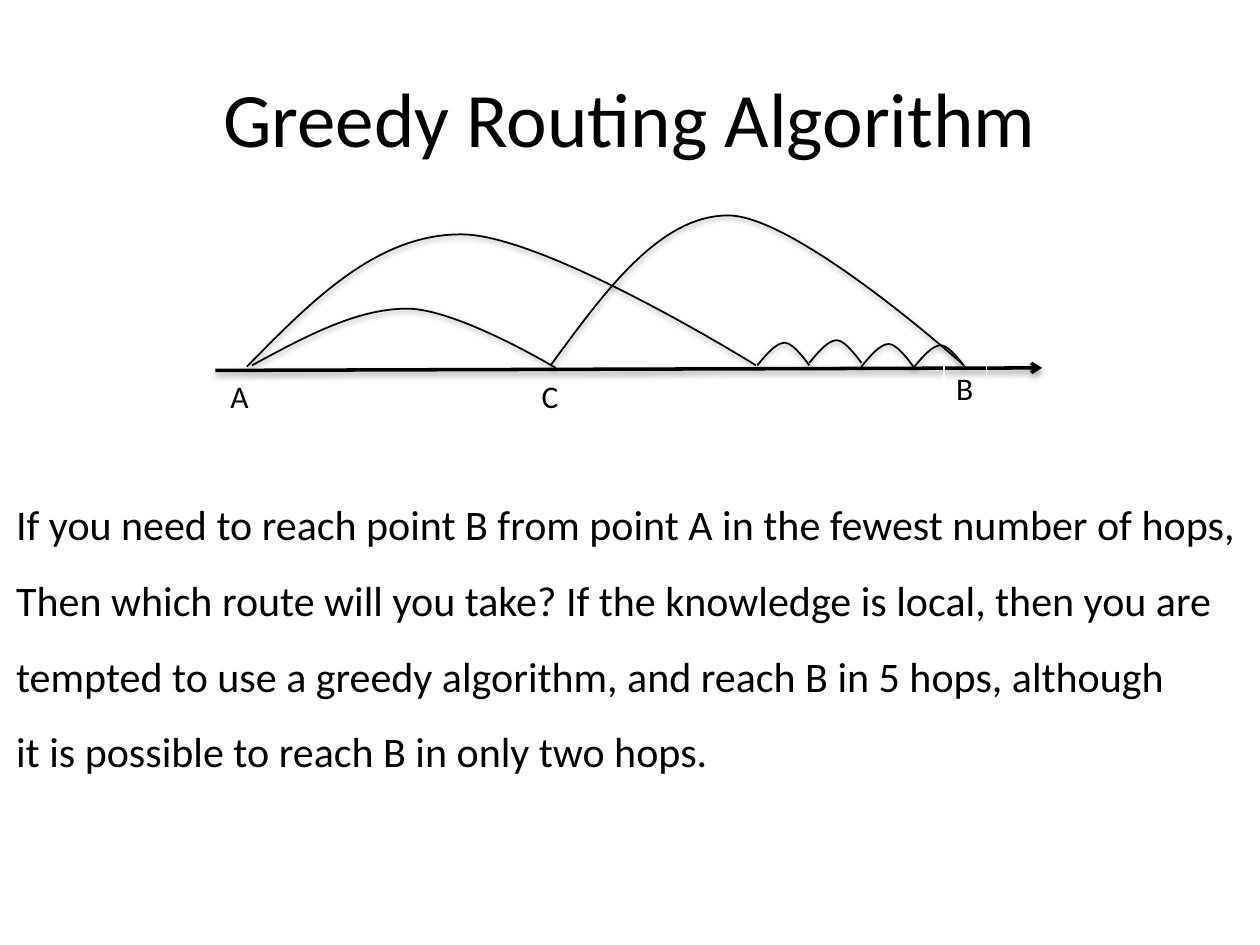
from collections import namedtuple
from lxml.etree import SubElement
from pptx import Presentation
from pptx.dml.color import RGBColor
from pptx.enum.shapes import MSO_CONNECTOR
from pptx.enum.text import MSO_ANCHOR, MSO_AUTO_SIZE, PP_ALIGN
from pptx.oxml.ns import qn
from pptx.util import Inches, Pt

BLACK = RGBColor(0x00, 0x00, 0x00)
WHITE = RGBColor(0xFF, 0xFF, 0xFF)
FONT = "Calibri"
SLIDE_W, SLIDE_H = Inches(10), Inches(7.5)
COLUMNS, ROWS = 100, 75

Box = namedtuple("Box", "left top width height")

TITLE_BOX = Box(5, 3, 90, 12.5)
ROUTES_BOX = Box(17, 17, 66, 16.4)
BODY_BOX = Box(0.3, 37.1, 99.7, 25.3)

BODY_LINES = [
    "If you need to reach point B from point A in the fewest number of hops,",
    "Then which route will you take? If the knowledge is local, then you are",
    "tempted to use a greedy algorithm, and reach B in 5 hops, although",
    "it is possible to reach B in only two hops.",
]
LONG_HOPS = [
    ((2.6, 12.1), (19.6, 1.6), (43, 12), 6.7),
    ((3, 12), (15.3, 7.5), (27.1, 12.2), 4),
    ((26.7, 12), (40.8, 0.1), (59.4, 11.9), 5.4),
]
SHORT_HOP_BASES = [12, 11.8, 12.1, 12.2]
SHORT_HOP_START, SHORT_HOP_STEP = 43.1, 4.13
LABELS = [
    ("A", Box(0.3, 12.4, 3.5, 4)),
    ("B", Box(57.9, 11.8, 3.4, 4)),
    ("C", Box(25, 12.4, 3.4, 4)),
]


def x_at(columns):
    return round(SLIDE_W * columns / COLUMNS)


def y_at(rows):
    return round(SLIDE_H * rows / ROWS)


def apply_format(target, values):
    for name, value in values.items():
        setattr(target, name, value)


def add_text(page, box, lines, size, frame_format, para_format):
    text_box = page.shapes.add_textbox(
        x_at(box.left), y_at(box.top), x_at(box.width), y_at(box.height))
    frame = text_box.text_frame
    apply_format(frame, frame_format)
    for index, line in enumerate(lines):
        para = frame.add_paragraph() if index else frame.paragraphs[0]
        apply_format(para, para_format)
        span = para.add_run()
        span.text = line
        apply_format(span.font, {"name": FONT, "size": Pt(size)})
        span.font.color.rgb = BLACK
    return text_box


def style_stroke(shape, width):
    shape.line.color.rgb = BLACK
    shape.line.width = Pt(width)
    effects = SubElement(shape._element.spPr, qn("a:effectLst"))
    shadow = SubElement(effects, qn("a:outerShdw"), blurRad="40000",
                        dist="20000", dir="5400000", rotWithShape="0")
    color = SubElement(shadow, qn("a:srgbClr"), val=str(BLACK))
    SubElement(color, qn("a:alpha"), val="38000")


def bend_segments(shape):
    outline = next(shape._element.iter(qn("a:path")))
    segments = outline.findall(qn("a:lnTo"))
    for first in range(0, len(segments), 3):
        curve = SubElement(outline, qn("a:cubicBezTo"))
        for segment in segments[first:first + 3]:
            curve.append(segment[0])
            outline.remove(segment)


def add_hop(page, box, start, apex, end, pull):
    rise = (apex[0] - pull, apex[1])
    fall = (apex[0] + pull, apex[1])
    middle = ((start[0] + rise[0]) / 2, (start[1] + rise[1]) / 2)
    points = [(x_at(box.left + x), y_at(box.top + y))
              for x, y in (start, middle, rise, apex, fall, end, end)]
    builder = page.shapes.build_freeform(*points[0])
    builder.add_line_segments(points[1:], close=False)
    hop = builder.convert_to_shape()
    bend_segments(hop)
    hop.fill.background()
    style_stroke(hop, 1)


def add_axis(page, box):
    axis = page.shapes.add_connector(
        MSO_CONNECTOR.STRAIGHT,
        x_at(box.left + 0.1), y_at(box.top + 12.4),
        x_at(box.left + 65.7), y_at(box.top + 12.2))
    style_stroke(axis, 2)
    SubElement(axis.line._get_or_add_ln(), qn("a:tailEnd"), type="arrow")


def add_title(page, box):
    add_text(page, box, ["Greedy Routing Algorithm"], 44,
             {"word_wrap": True, "vertical_anchor": MSO_ANCHOR.MIDDLE},
             {"alignment": PP_ALIGN.CENTER})


def add_routes(page, box):
    add_axis(page, box)
    for letter, place in LABELS:
        spot = place._replace(left=box.left + place.left, top=box.top + place.top)
        label = add_text(page, spot, [letter], 18,
                         {"word_wrap": False,
                          "auto_size": MSO_AUTO_SIZE.SHAPE_TO_FIT_TEXT}, {})
        if letter == "B":
            label.line.color.rgb = WHITE
            label.line.width = Pt(1)
    for index, base in enumerate(SHORT_HOP_BASES):
        left = SHORT_HOP_START + index * SHORT_HOP_STEP
        add_hop(page, box, (left, base), (left + 2.2, base - 1.8),
                (left + SHORT_HOP_STEP, base), 0.7)
    for hop in LONG_HOPS:
        add_hop(page, box, *hop)


def add_body(page, box):
    add_text(page, box, BODY_LINES, 24,
             {"word_wrap": False, "auto_size": MSO_AUTO_SIZE.SHAPE_TO_FIT_TEXT},
             {"line_spacing": 1.5})


def main():
    deck = Presentation()
    apply_format(deck, {"slide_width": SLIDE_W, "slide_height": SLIDE_H})
    page = deck.slides.add_slide(deck.slide_layouts[6])
    add_title(page, TITLE_BOX)
    add_routes(page, ROUTES_BOX)
    add_body(page, BODY_BOX)
    deck.save("out.pptx")


if __name__ == "__main__":
    main()
